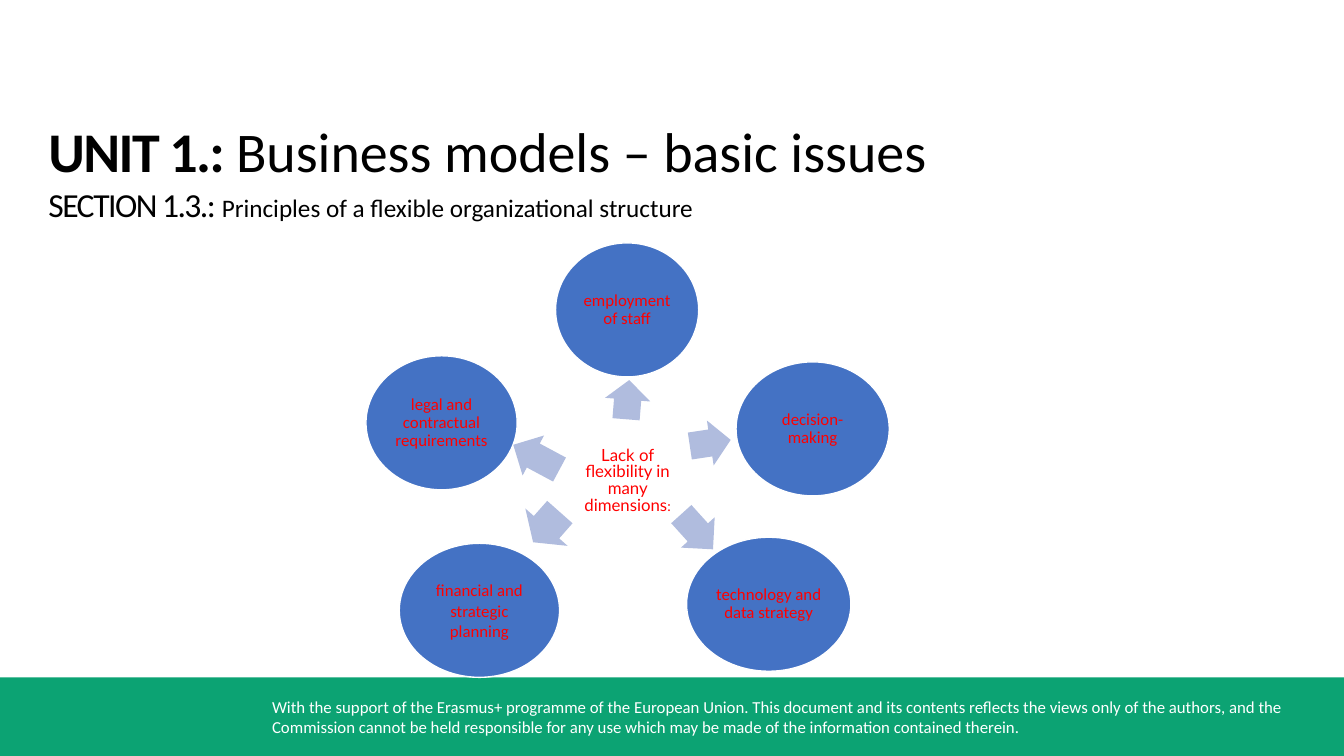
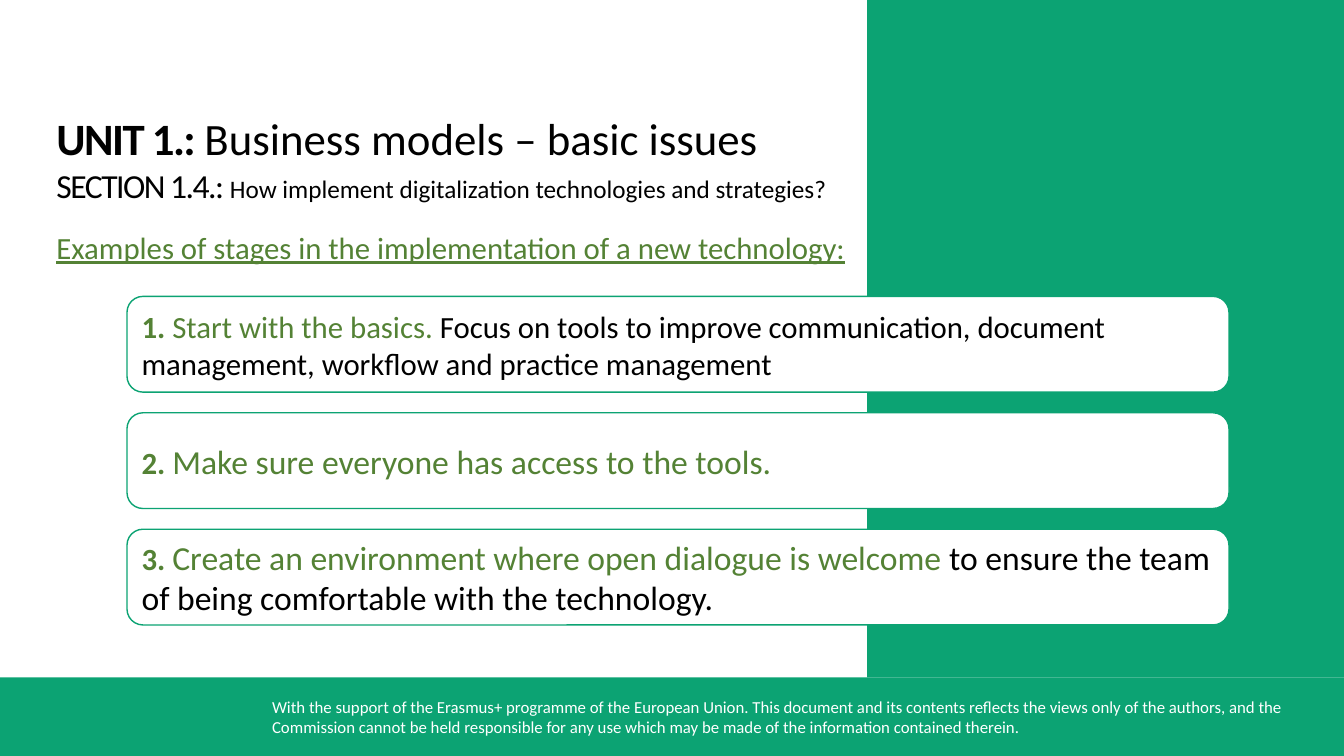
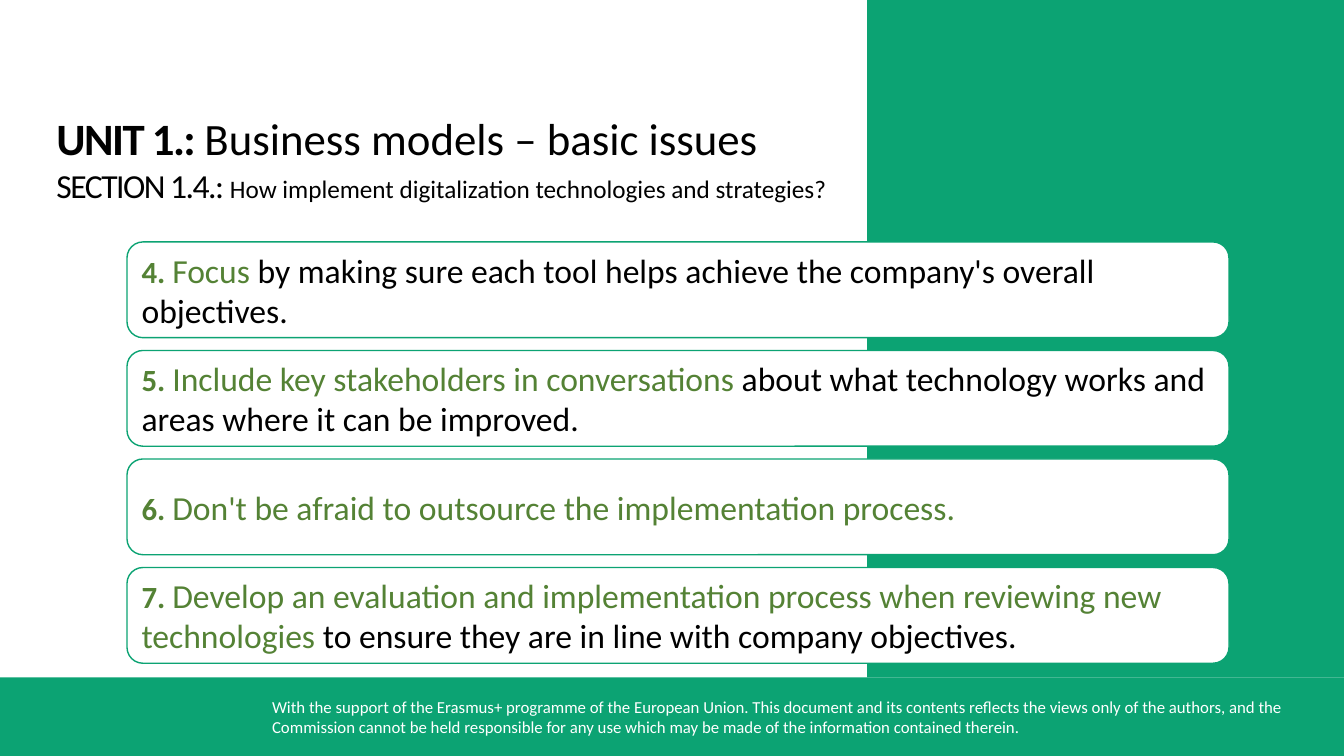
"""Build three training slides on flexible structures and digital strategy."""
from pptx import Presentation
from pptx.dml.color import RGBColor
from pptx.enum.shapes import MSO_SHAPE as SHAPE
from pptx.enum.text import MSO_ANCHOR as ANCHOR, MSO_AUTO_SIZE as AUTO_SIZE, PP_ALIGN as ALIGN
from pptx.util import Inches, Pt

COLORS = {"green": "0CA373", "leaf": "548235", "blue": "4472C4", "mist": "B0BCDE",
          "red": "FF0000", "white": "FFFFFF", "black": "000000"}
FONT = "Calibri"
TIGHT = -110

FOOTER = ("With the support of the Erasmus+ programme of the European Union. This document and its "
          "contents reflects the views only of the authors, and the Commission cannot be held "
          "responsible for any use which may be made of the information contained therein.")
UNIT = ("UNIT 1.: ", "Business models – basic issues")
FLEXIBLE = ("SECTION 1.3.: ", "Principles of a flexible organizational structure")
DIGITAL = ("SECTION 1.4.: ", "How implement digitalization technologies and strategies?")
EXAMPLES = "Examples of stages in the implementation of a new technology:"

DIMENSIONS = [
    ("employment of staff", (5.51, 2.41, 1.42), 0.9),
    ("decision-making", (7.3, 3.59, 1.52), 0.9),
    ("technology and data strategy", (6.81, 5.33, 1.63), 0.9),
    ("financial and strategic planning", (3.96, 5.39, 1.59), 1.0),
    ("legal and contractual requirements", (3.63, 3.53, 1.5), 0.9),
]
CIRCLE_HEIGHT = 1.33
ARROWS = [
    ((6.84, 4.17, 0.41, 0.45), 351.5),
    ((6.68, 5.05, 0.47, 0.45), 48),
    ((5.22, 4.95, 0.4, 0.56), 131.5),
    ((5.06, 4.31, 0.52, 0.45), 208.2),
    ((6.03, 3.74, 0.39, 0.45), 274.6),
]

STEP_SLIDES = [
    {"heading": EXAMPLES, "first_top": 2.94, "last_top": 5.25, "steps": [
        ("1. ", "Start with the basics. ",
         "Focus on tools to improve communication, document management, workflow and "
         "practice management", 22),
        ("2. ", "Make sure everyone has access to the tools.", "", 24),
        ("3. ", "Create an environment where open dialogue is welcome ",
         "to ensure the team of being comfortable with the technology.", 24)]},
    {"heading": "", "first_top": 2.4, "last_top": 5.63, "steps": [
        ("4. ", "Focus ",
         "by making sure each tool helps achieve the company's overall objectives.", 24),
        ("5. ", "Include key stakeholders in conversations ",
         "about what technology works and areas where it can be improved.", 24),
        ("6. ", "Don't be afraid to outsource the implementation process.", "", 24),
        ("7. ", "Develop an evaluation and implementation process when reviewing new technologies ",
         "to ensure they are in line with company objectives.", 24)]},
]


def color(name):
    return RGBColor.from_string(COLORS[name])


def add_run(paragraph, text, size, ink, bold=False, underline=False, spacing=0, font=FONT):
    run = paragraph.add_run()
    run.text = text
    run.font.name, run.font.size = font, Pt(size)
    run.font.bold, run.font.underline = bold, underline
    run.font.color.rgb = color(ink)
    if spacing:
        run._r.get_or_add_rPr().set("spc", str(spacing))


def add_figure(slide, kind, box, fill, line=None):
    shape = slide.shapes.add_shape(kind, *map(Inches, box))
    shape.shadow.inherit = False
    shape.fill.solid()
    shape.fill.fore_color.rgb = color(fill)
    if line:
        shape.line.color.rgb = color(line)
        shape.line.width = Pt(1)
    else:
        shape.line.fill.background()
    return shape


def add_text_box(slide, box):
    text_box = slide.shapes.add_textbox(*map(Inches, box))
    text_box.text_frame.word_wrap = True
    return text_box


def add_footer(slide, layout):
    band = add_figure(slide, SHAPE.RECTANGLE, (0, 6.72, 13.33, 0.78), "green")
    notice = add_text_box(slide, (2.6, 6.86, 10.42, 0.5))
    add_run(notice.text_frame.paragraphs[0], FOOTER, 12, "white")
    for shape in (band, notice):
        layout.shapes.element.append(shape.element)


def set_title(slide, box, unit_size, section, heading=""):
    title = slide.shapes.title
    title.left, title.top, title.width, title.height = map(Inches, box)
    frame = title.text_frame
    frame.vertical_anchor = ANCHOR.TOP
    frame.auto_size = AUTO_SIZE.SHAPE_TO_FIT_TEXT
    unit_line, section_line = frame.paragraphs[0], frame.add_paragraph()
    add_run(unit_line, UNIT[0], unit_size, "black", bold=True, spacing=TIGHT)
    add_run(unit_line, UNIT[1], unit_size, "black")
    add_run(section_line, section[0], 24, "black", spacing=TIGHT)
    add_run(section_line, section[1], 18, "black")
    if heading:
        heading_line = frame.add_paragraph()
        heading_line.space_before = Pt(17)
        add_run(heading_line, heading, 22, "leaf", underline=True)
    for paragraph in frame.paragraphs:
        paragraph.alignment = ALIGN.LEFT


def add_dimensions(slide):
    for label, (left, top, width), line_spacing in DIMENSIONS:
        circle = add_figure(slide, SHAPE.OVAL, (left, top, width, CIRCLE_HEIGHT), "blue", "white")
        frame = circle.text_frame
        frame.margin_left = frame.margin_right = Inches(0.02)
        frame.margin_top = frame.margin_bottom = Inches(0.02)
        frame.vertical_anchor = ANCHOR.MIDDLE
        paragraph = frame.paragraphs[0]
        paragraph.alignment = ALIGN.CENTER
        paragraph.line_spacing = line_spacing
        add_run(paragraph, label, 12, "red")
    for box, rotation in ARROWS:
        arrow = add_figure(slide, SHAPE.RIGHT_ARROW, box, "mist")
        arrow.adjustments[0], arrow.adjustments[1] = 0.6, 0.5
        arrow.rotation = rotation
    center = add_text_box(slide, (5.56, 4.39, 1.33, 0.77))
    paragraph = center.text_frame.paragraphs[0]
    paragraph.alignment = ALIGN.CENTER
    paragraph.line_spacing = Pt(12.1)
    add_run(paragraph, "Lack of flexibility in many dimensions", 12, "red", font="Lato")
    add_run(paragraph, ":", 10, "red", font="Lato")


def add_steps(slide, steps, first_top, last_top):
    pitch = (last_top - first_top) / (len(steps) - 1)
    for index, (number, lead, detail, size) in enumerate(steps):
        box = (1.26, first_top + index * pitch, 10.93, 0.95)
        card = add_figure(slide, SHAPE.ROUNDED_RECTANGLE, box, "white", "green")
        card.text_frame.vertical_anchor = ANCHOR.MIDDLE
        paragraph = card.text_frame.paragraphs[0]
        paragraph.alignment = ALIGN.LEFT
        add_run(paragraph, number, 22, "leaf", bold=True)
        add_run(paragraph, lead, size, "leaf")
        if detail:
            add_run(paragraph, detail, size, "black")


def main():
    presentation = Presentation()
    presentation.slide_width, presentation.slide_height = Inches(13.33), Inches(7.5)
    layout = presentation.slide_layouts[5]

    slide = presentation.slides.add_slide(layout)
    add_footer(slide, layout)
    set_title(slide, (0.38, 1.11, 12.86, 1.18), 40, FLEXIBLE)
    add_dimensions(slide)

    for content in STEP_SLIDES:
        slide = presentation.slides.add_slide(layout)
        panel = add_figure(slide, SHAPE.RECTANGLE, (8.6, 0, 4.73, 6.72), "green")
        slide.shapes.element.insert(2, panel.element)
        height = 1.7 if content["heading"] else 1.05
        set_title(slide, (0.46, 1.05, 12.75, height), 32, DIGITAL, content["heading"])
        add_steps(slide, content["steps"], content["first_top"], content["last_top"])

    presentation.save("out.pptx")


if __name__ == "__main__":
    main()
